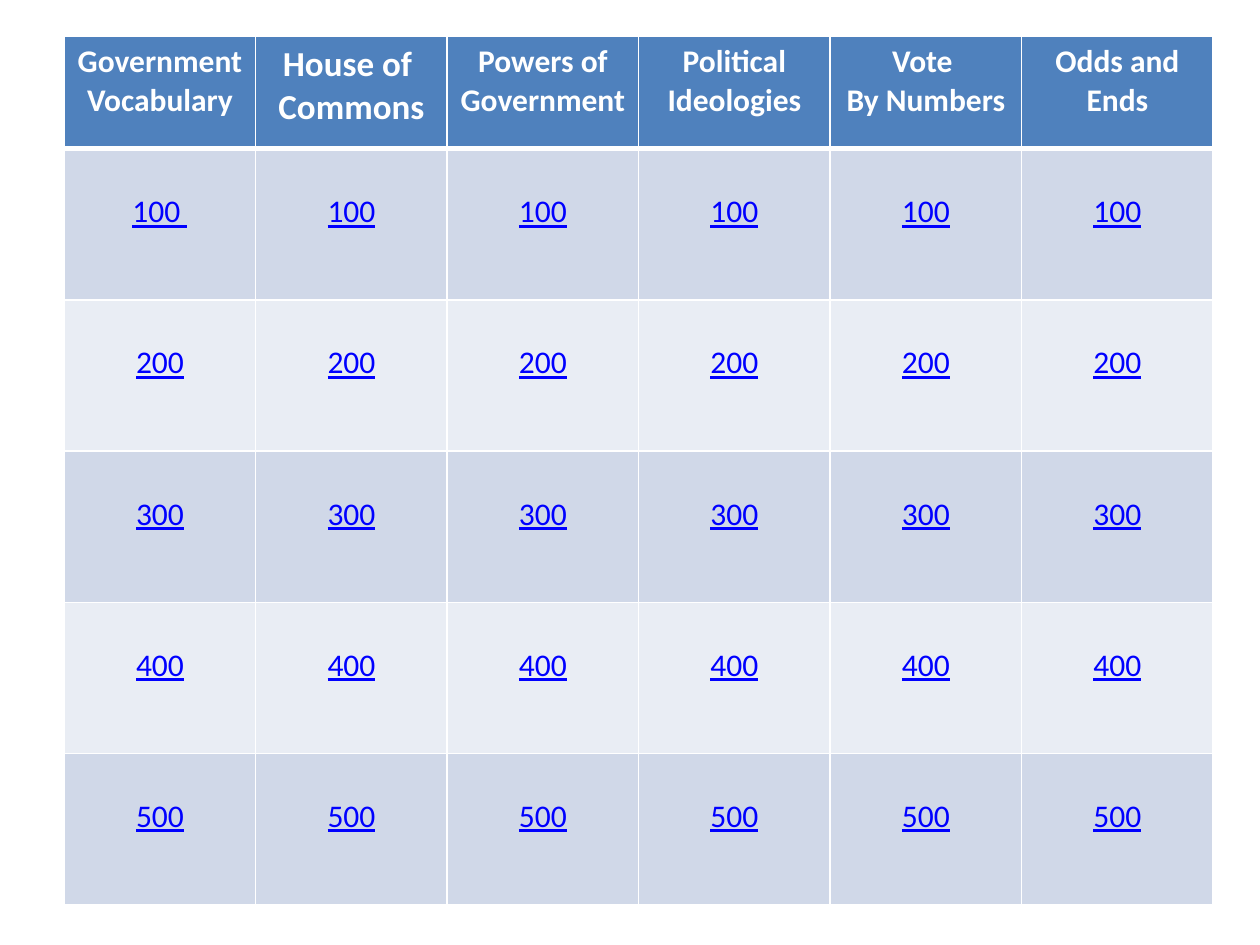
from lxml import etree
from pptx import Presentation
from pptx.dml.color import RGBColor
from pptx.enum.text import PP_ALIGN
from pptx.oxml.ns import qn
from pptx.util import Inches, Pt

CENTER = PP_ALIGN.CENTER
BLANK_LAYOUT = 6

THEME = {
    "font": "Calibri",
    "header_fill": "4F81BD",
    "band_fills": ["D0D8E8", "E9EDF4"],
    "border": "FFFFFF",
    "header_text": "FFFFFF",
    "points_text": "0000FF",
    "text_size": 18,
    "large_text_size": 20,
    "thin_border": 1,
    "header_border": 3,
}

CATEGORIES = [
    "Government\nVocabulary",
    "House of \nCommons",
    "Powers of Government",
    "Political Ideologies",
    "Vote \nBy Numbers",
    "Odds and Ends",
]
LARGE_CATEGORY = 1
POINTS = [100, 200, 300, 400, 500]
COLUMN_WIDTH = Inches(1.52)
HEADER_HEIGHT = Inches(0.89)
POINTS_HEIGHT = Inches(1.2)
POINTS_TOP_MARGIN = Inches(0.35)


def add_borders(cell, top, bottom):
    """Draw the four cell borders; must run before the cell gets its fill."""
    properties = cell._tc.get_or_add_tcPr()
    thin = THEME["thin_border"]
    for side, width in {"lnL": thin, "lnR": thin, "lnT": top, "lnB": bottom}.items():
        line = etree.SubElement(properties, qn(f"a:{side}"), w=str(Pt(width)))
        solid = etree.SubElement(line, qn("a:solidFill"))
        etree.SubElement(solid, qn("a:srgbClr"), val=THEME["border"])


def fill_cell(cell, text, fill, color, font_format):
    cell.fill.solid()
    cell.fill.fore_color.rgb = RGBColor.from_string(fill)
    cell.text = text
    for paragraph in cell.text_frame.paragraphs:
        paragraph.alignment = CENTER
        for run in paragraph.runs:
            run.font.name = THEME["font"]
            run.font.color.rgb = RGBColor.from_string(color)
            for name, value in font_format.items():
                setattr(run.font, name, value)


presentation = Presentation()
presentation.slide_width = Inches(10)
presentation.slide_height = Inches(7.5)
slide = presentation.slides.add_slide(presentation.slide_layouts[BLANK_LAYOUT])

board = slide.shapes.add_table(
    len(POINTS) + 1, len(CATEGORIES), Inches(0.51), Inches(0.29),
    COLUMN_WIDTH * len(CATEGORIES), HEADER_HEIGHT + POINTS_HEIGHT * len(POINTS),
).table
for column in board.columns:
    column.width = COLUMN_WIDTH
for row in board.rows:
    row.height = POINTS_HEIGHT
board.rows[0].height = HEADER_HEIGHT

for column_index, category in enumerate(CATEGORIES):
    header = board.cell(0, column_index)
    add_borders(header, THEME["thin_border"], THEME["header_border"])
    size = THEME["large_text_size" if column_index == LARGE_CATEGORY else "text_size"]
    fill_cell(header, category, THEME["header_fill"], THEME["header_text"],
              {"size": Pt(size), "bold": True})

    for row_index, points in enumerate(POINTS):
        cell = board.cell(row_index + 1, column_index)
        top = THEME["header_border" if row_index == 0 else "thin_border"]
        add_borders(cell, top, THEME["thin_border"])
        cell.margin_top = POINTS_TOP_MARGIN
        text = "100 " if row_index == column_index == 0 else str(points)
        fill_cell(cell, text, THEME["band_fills"][row_index % 2], THEME["points_text"],
                  {"size": Pt(THEME["text_size"]), "bold": False, "underline": True})

presentation.save("out.pptx")
